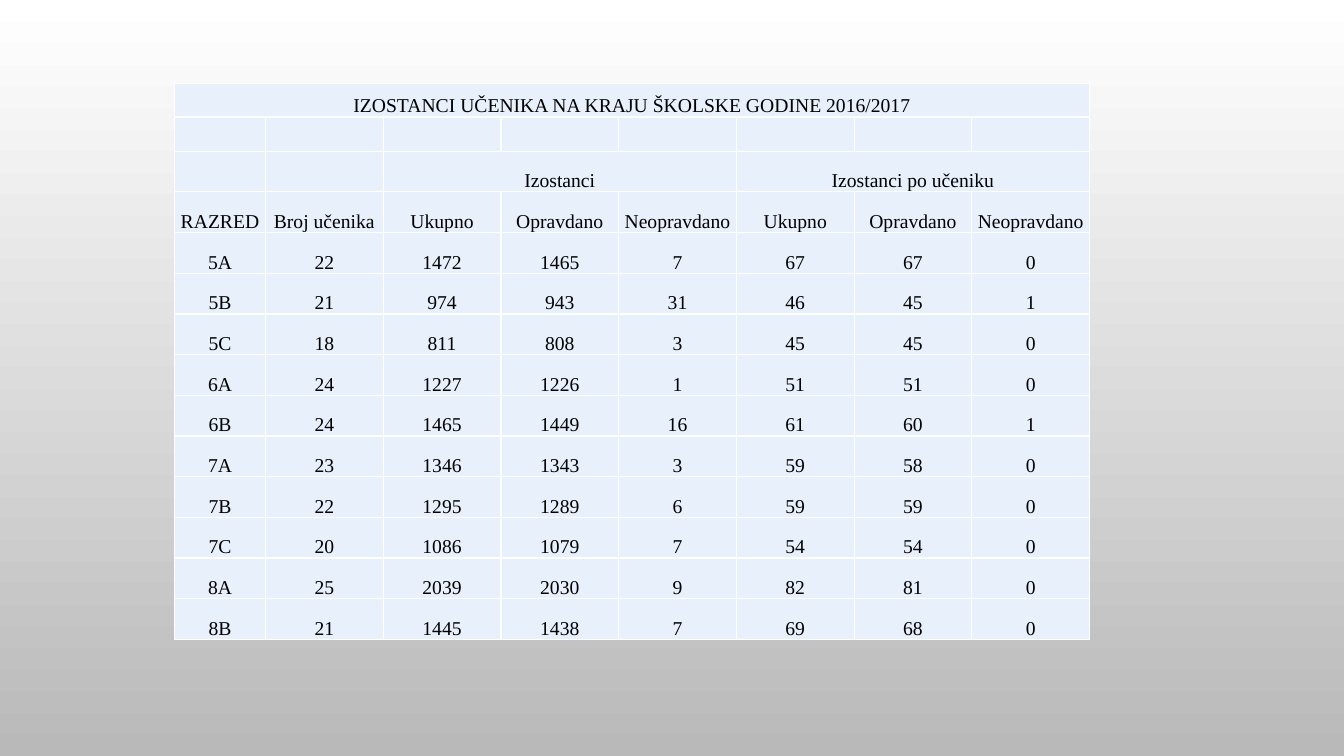
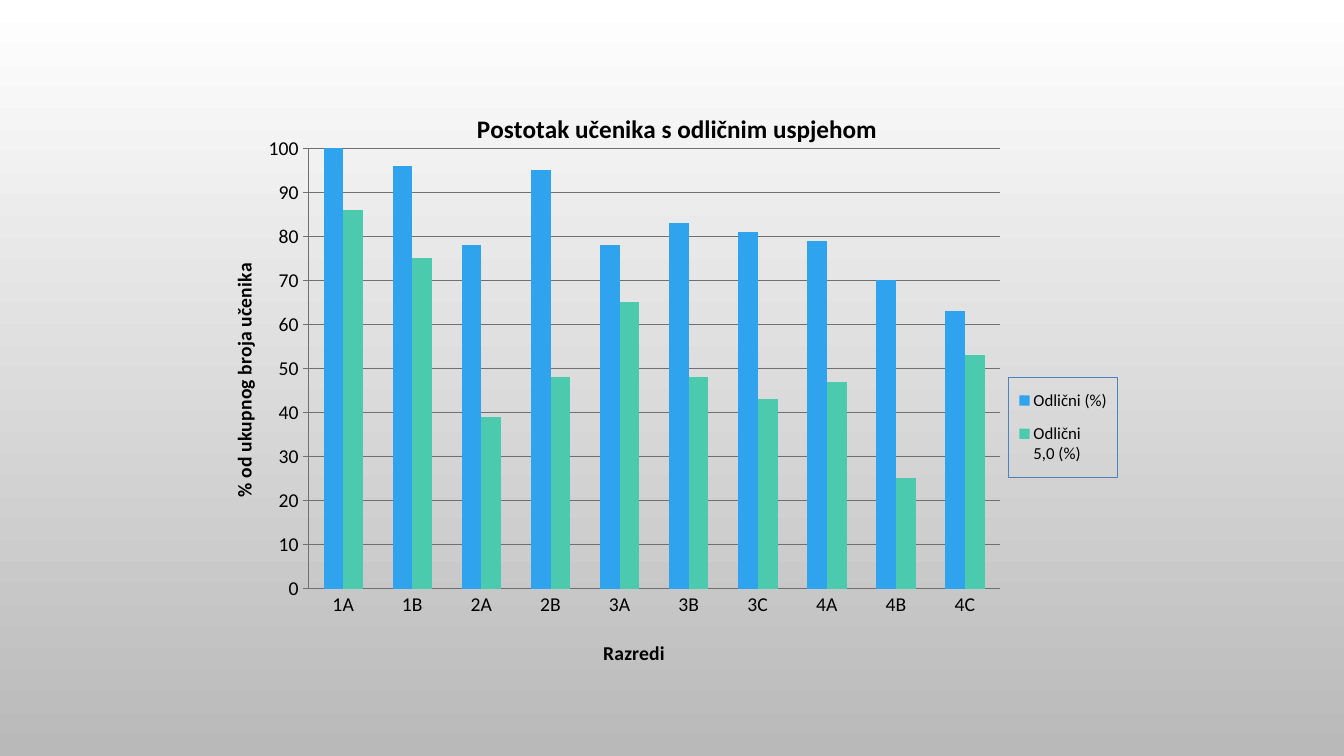
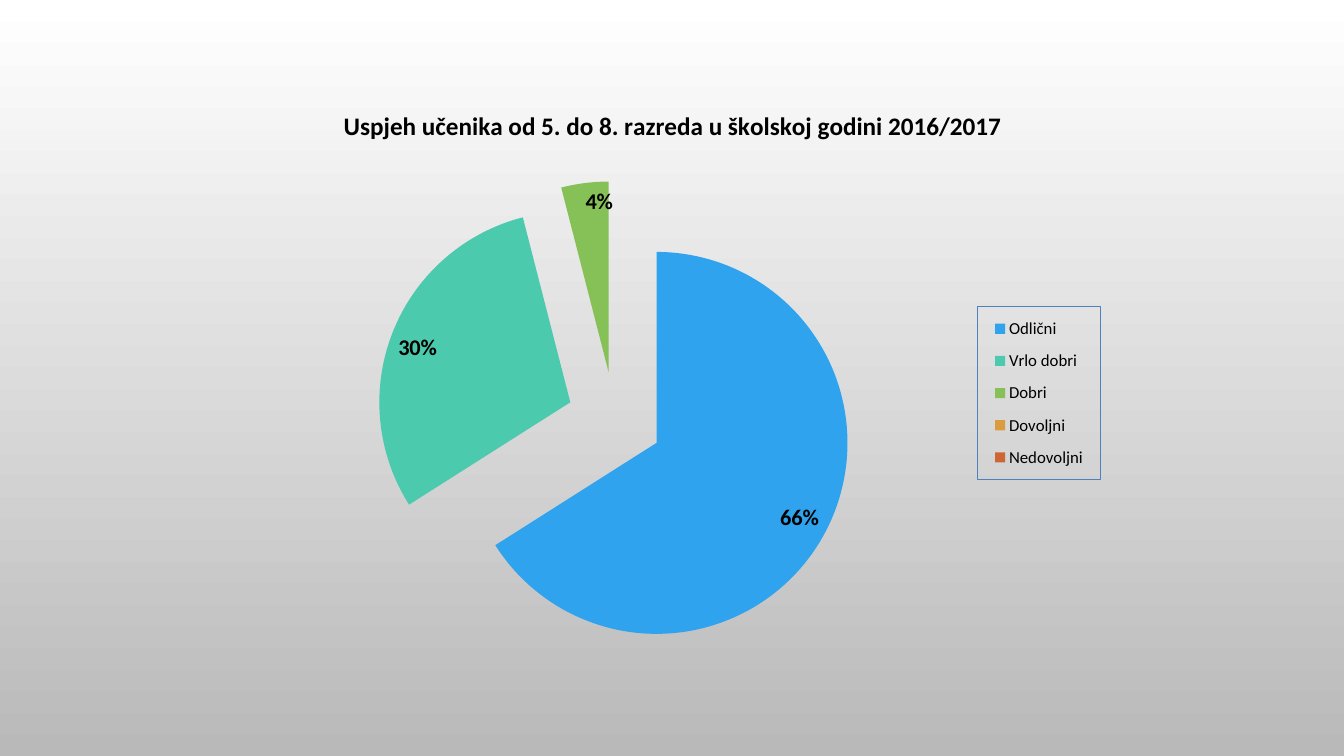
from pptx import Presentation, oxml, util as u
from pptx.chart.data import CategoryChartData
from pptx.dml.color import RGBColor
from pptx.enum import chart as ch, text as t
from pptx.oxml import ns

BLACK = RGBColor(0, 0, 0)
WHITE = RGBColor(0xFF, 0xFF, 0xFF)
SHADE = RGBColor(0xB9, 0xB9, 0xB9)
PALE = RGBColor(0xE8, 0xF0, 0xFC)
GRAY = RGBColor(0x70, 0x70, 0x70)
EDGE = RGBColor(0x4F, 0x81, 0xBD)
BLUE = RGBColor(0x2F, 0xA3, 0xEE)
TEAL = RGBColor(0x4B, 0xCA, 0xAD)
GREEN = RGBColor(0x86, 0xC1, 0x57)
GOLD = RGBColor(0xD9, 0x9C, 0x3F)
RUST = RGBColor(0xCE, 0x66, 0x33)

CELL = dict(name="Times New Roman", size=u.Pt(14), color=BLACK)
BASE = dict(name="Calibri", size=u.Pt(10), color=BLACK)
HEAD = dict(BASE, size=u.Pt(18), bold=True)
NAME = dict(BASE, size=u.Pt(14), bold=True)
TICK = dict(BASE, size=u.Pt(14), bold=False)
KEY = dict(BASE, size=u.Pt(12), bold=False)
SHARE = dict(BASE, size=u.Pt(16), bold=True)

TITLE = "IZOSTANCI UČENIKA NA KRAJU ŠKOLSKE GODINE 2016/2017"
KINDS = ["Ukupno", "Opravdano", "Neopravdano"]
GROUPS = {2: "Izostanci", 5: "Izostanci po učeniku"}
ROWS = [
    ["RAZRED", "Broj učenika"] + KINDS * 2,
    ["5A", 22, 1472, 1465, 7, 67, 67, 0],
    ["5B", 21, 974, 943, 31, 46, 45, 1],
    ["5C", 18, 811, 808, 3, 45, 45, 0],
    ["6A", 24, 1227, 1226, 1, 51, 51, 0],
    ["6B", 24, 1465, 1449, 16, 61, 60, 1],
    ["7A", 23, 1346, 1343, 3, 59, 58, 0],
    ["7B", 22, 1295, 1289, 6, 59, 59, 0],
    ["7C", 20, 1086, 1079, 7, 54, 54, 0],
    ["8A", 25, 2039, 2030, 9, 82, 81, 0],
    ["8B", 21, 1445, 1438, 7, 69, 68, 0],
]
GRADES = ["1A", "1B", "2A", "2B", "3A", "3B", "3C", "4A", "4B", "4C"]
BARS = [
    ("Odlični (%)", [100, 96, 78, 95, 78, 83, 81, 79, 70, 63], BLUE),
    ("Odlični \n5,0 (%)", [86, 75, 39, 48, 65, 48, 43, 47, 25, 53], TEAL),
]
MARKS = [
    ("Odlični", 66, BLUE),
    ("Vrlo dobri", 30, TEAL),
    ("Dobri", 4, GREEN),
    ("Dovoljni", 0, GOLD),
    ("Nedovoljni", 0, RUST),
]


def style(font, form):
    for key, val in form.items():
        if key == "color":
            font.color.rgb = val
        else:
            setattr(font, key, val)


def node(tag, body="", attrs=""):
    return oxml.parse_xml(f"<{tag} {ns.nsdecls('a', 'c')} {attrs}>{body}</{tag}>")


def edge(cell):
    props = cell._tc.get_or_add_tcPr()
    for side in "LRTB":
        paint = f'<a:solidFill><a:srgbClr val="{WHITE}"/></a:solidFill>'
        props.append(node(f"a:ln{side}", paint, f'w="{u.Pt(1)}"'))


def write(cell, words):
    cell.text = str(words)
    para = cell.text_frame.paragraphs[0]
    para.alignment = t.PP_ALIGN.CENTER
    style(para.runs[0].font, CELL)


def grid(slide, box):
    count, span = len(ROWS) + 3, 8
    table = slide.shapes.add_table(count, span, *map(u.Cm, box)).table
    table.first_row = table.horz_banding = False
    wide, tall = box[2:]
    first, tops = 2.29, [0.84, 0.86]
    for i, col in enumerate(table.columns):
        col.width = u.Cm(first if i == 0 else (wide - first) / (span - 1))
    for i, row in enumerate(table.rows):
        rest = (tall - sum(tops)) / (count - len(tops))
        row.height = u.Cm(tops[i] if i < len(tops) else rest)
    look = dict(margin_left=u.Cm(0.02), margin_right=u.Cm(0.02),
                margin_top=u.Cm(0.02), margin_bottom=0,
                vertical_anchor=t.MSO_ANCHOR.BOTTOM)
    for cell in table.iter_cells():
        edge(cell)
        cell.fill.solid()
        cell.fill.fore_color.rgb = PALE
        for key, val in look.items():
            setattr(cell, key, val)
    table.cell(0, 0).merge(table.cell(0, span - 1))
    write(table.cell(0, 0), TITLE)
    for col, words in GROUPS.items():
        table.cell(2, col).merge(table.cell(2, col + 2))
        write(table.cell(2, col), words)
    for i, row in enumerate(ROWS, 3):
        for j, words in enumerate(row):
            write(table.cell(i, j), words)


def place(chart, spots):
    for route, spot in spots.items():
        part = chart._chartSpace.xpath(route)[0]
        for old in part.findall(ns.qn("c:layout")):
            part.remove(old)
        plot = route.endswith("plotArea")
        body = '<c:layoutTarget val="inner"/>' if plot else ""
        body += '<c:xMode val="edge"/><c:yMode val="edge"/>'
        for key, val in zip("xywh", spot):
            body += f'<c:{key} val="{val}"/>'
        lay = node("c:layout", f"<c:manualLayout>{body}</c:manualLayout>")
        part.insert(0 if plot else 1, lay)


def label(owner, words, form):
    frame = owner.text_frame
    frame.text = words
    style(frame.paragraphs[0].runs[0].font, form)


def graph(slide, box, kind, data, title):
    chart = slide.shapes.add_chart(kind, *map(u.Cm, box), data).chart
    style(chart.font, BASE)
    chart.has_title = True
    label(chart.chart_title, title, HEAD)
    chart.has_legend = True
    key = chart.legend
    key.position = ch.XL_LEGEND_POSITION.RIGHT
    key.include_in_layout = False
    style(key.font, KEY)
    line = f'<a:ln w="9525"><a:solidFill><a:srgbClr val="{EDGE}"/></a:solidFill></a:ln>'
    text = chart._chartSpace.xpath(".//c:legend/c:txPr")[0]
    text.addprevious(node("c:spPr", "<a:noFill/>" + line))
    return chart


def paint(part, color):
    part.format.fill.solid()
    part.format.fill.fore_color.rgb = color


def bars(slide, box):
    data = CategoryChartData()
    data.categories = GRADES
    for name, vals, _ in BARS:
        data.add_series(name, vals)
    chart = graph(slide, box, ch.XL_CHART_TYPE.COLUMN_CLUSTERED, data,
                  "Postotak učenika s odličnim uspjehom")
    plot = chart.plots[0]
    plot.gap_width, plot.overlap, plot.vary_by_categories = 150, 0, False
    for part, (_, _, color) in zip(plot.series, BARS):
        paint(part, color)
    cat, val = chart.category_axis, chart.value_axis
    mark = ch.XL_TICK_MARK
    for axis, words, tick in ((cat, "Razredi", mark.NONE),
                              (val, "% od ukupnog broja učenika", mark.OUTSIDE)):
        label(axis.axis_title, words, NAME)
        style(axis.tick_labels.font, TICK)
        axis.major_tick_mark, axis.minor_tick_mark = tick, mark.NONE
        axis.format.line.color.rgb = GRAY
    for key, num in dict(minimum_scale=0, maximum_scale=100, major_unit=10,
                         has_major_gridlines=True).items():
        setattr(val, key, num)
    val.major_gridlines.format.line.color.rgb = GRAY
    turn = chart._chartSpace.xpath(".//c:valAx/c:title//a:bodyPr")[0]
    turn.set("rot", "-5400000")
    turn.set("vert", "horz")
    place(chart, {
        "./c:chart/c:title": (0.28, 0.04),
        ".//c:plotArea": (0.1, 0.11, 0.76, 0.75),
        ".//c:catAx/c:title": (0.42, 0.94),
        ".//c:valAx/c:title": (0.01, 0.3),
        ".//c:legend": (0.87, 0.5, 0.12, 0.17),
    })


def pie(slide, box):
    names, vals, tints = zip(*MARKS)
    data = CategoryChartData()
    data.categories = names
    data.add_series("Series 1", vals)
    chart = graph(slide, box, ch.XL_CHART_TYPE.PIE, data,
                  "Uspjeh učenika od 5. do 8. razreda u školskoj godini 2016/2017")
    plot = chart.plots[0]
    plot.vary_by_categories = True
    part = plot.series[0]
    name = chart._chartSpace.xpath(".//c:ser/c:tx")[0]
    name.addnext(node("c:explosion", attrs='val="25"'))
    for i, tint in enumerate(tints):
        paint(part.points[i], tint)
    tags = part.data_labels
    for key, val in dict(show_percentage=True, show_value=False,
                         number_format="0%", number_format_is_linked=False,
                         position=ch.XL_LABEL_POSITION.INSIDE_END).items():
        setattr(tags, key, val)
    style(tags.font, SHARE)
    list_ = chart._chartSpace.xpath(".//c:ser/c:dLbls")[0]
    blank = [i for i, val in enumerate(vals) if val == 0]
    for spot, i in enumerate(blank):
        list_.insert(spot, node("c:dLbl", f'<c:idx val="{i}"/><c:delete val="1"/>'))
    place(chart, {
        "./c:chart/c:title": (0.12, 0.04),
        ".//c:plotArea": (0.16, 0.17, 0.55, 0.8),
        ".//c:legend": (0.85, 0.38, 0.14, 0.29),
    })


def main():
    prs = Presentation()
    prs.slide_width, prs.slide_height = u.Cm(33.87), u.Cm(19.05)
    back = prs.slide_master.background.fill
    back.gradient()
    back.gradient_angle = 270
    for stop, color, spot in zip(back.gradient_stops, (WHITE, SHADE), (0, 1)):
        stop.color.rgb = color
        stop.position = spot
    for draw, box in ((grid, (4.4, 2.11, 23.06, 14)),
                      (bars, (5.49, 2.11, 22.91, 14.81)),
                      (pie, (5.9, 2.01, 22.05, 15.04))):
        draw(prs.slides.add_slide(prs.slide_layouts[6]), box)
    prs.save("out.pptx")


if __name__ == "__main__":
    main()
